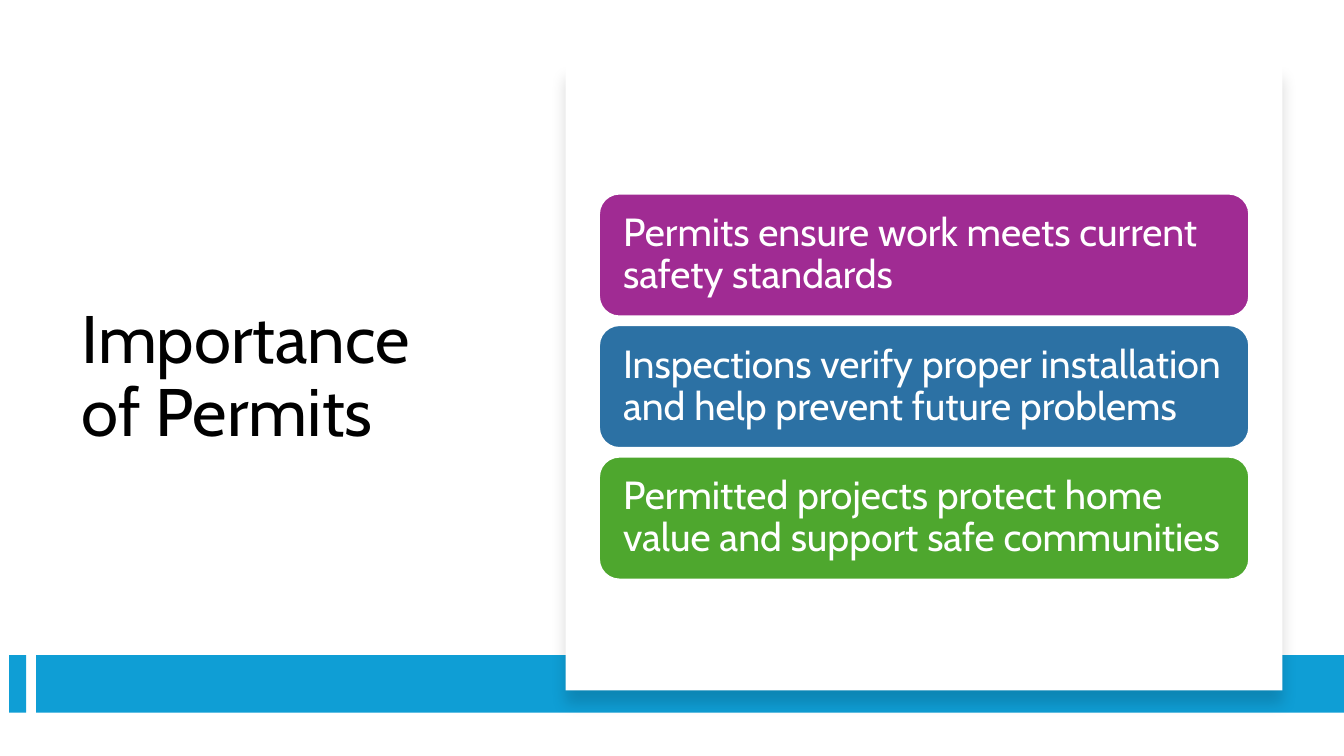
from lxml import etree
from pptx import Presentation
from pptx.dml.color import RGBColor
from pptx.enum.shapes import MSO_SHAPE as Shape
from pptx.enum.text import MSO_ANCHOR as Anchor, PP_ALIGN as Align
from pptx.oxml import parse_xml
from pptx.oxml.ns import nsdecls
from pptx.util import Inches, Pt

BLACK = RGBColor(0x00, 0x00, 0x00)
WHITE = RGBColor(0xFF, 0xFF, 0xFF)
CYAN = RGBColor(0x0F, 0x9E, 0xD5)
PURPLE = RGBColor(0xA0, 0x2B, 0x93)
BLUE = RGBColor(0x2C, 0x71, 0xA4)
GREEN = RGBColor(0x4E, 0xA7, 0x2E)

FONT = "Cabin"
REASONS = [
    ("Permits ensure work meets current safety standards", PURPLE),
    ("Inspections verify proper installation and help prevent future problems", BLUE),
    ("Permitted projects protect home value and support safe communities", GREEN),
]


def add_block(slide, kind, left, top, width, height, color):
    block = slide.shapes.add_shape(
        kind, Inches(left), Inches(top), Inches(width), Inches(height))
    block.shadow.inherit = False
    block.fill.solid()
    block.fill.fore_color.rgb = color
    block.line.fill.background()
    return block


def write(holder, words, size, color):
    frame = holder.text_frame
    frame.word_wrap = True
    frame.vertical_anchor = Anchor.MIDDLE
    frame.text = words
    line = frame.paragraphs[0]
    line.alignment = Align.LEFT
    line.line_spacing = 0.9
    font = line.runs[0].font
    font.name = FONT
    font.size = Pt(size)
    font.color.rgb = color


def add_title(slide, left, top, width, height):
    title = slide.shapes.add_textbox(
        Inches(left), Inches(top), Inches(width), Inches(height))
    write(title, "Importance of Permits", 48, BLACK)


def add_footer_band(slide, left, top, width, height):
    tab_width, gap = 0.17, 0.1
    band_offset = tab_width + gap
    add_block(slide, Shape.RECTANGLE, left, top, tab_width, height, CYAN)
    add_block(slide, Shape.RECTANGLE, left + band_offset, top,
              width - band_offset, height, CYAN)


def cast_shadow(block):
    effects = block._element.spPr.find(
        "{http://schemas.openxmlformats.org/drawingml/2006/main}effectLst")
    effects.append(parse_xml(
        f'<a:outerShdw {nsdecls("a")} blurRad="{Pt(11)}" dist="{Pt(10)}" '
        'dir="5400000" algn="t" rotWithShape="0"><a:srgbClr val="000000">'
        '<a:alpha val="15000"/></a:srgbClr></a:outerShdw>'))


def add_reasons_panel(slide, left, top, width, height):
    panel = add_block(slide, Shape.RECTANGLE, left, top, width, height, WHITE)
    cast_shadow(panel)
    margin, first_offset, card_height, pitch = 0.33, 1.28, 1.22, 1.305
    for index, (reason, color) in enumerate(REASONS):
        card = add_block(slide, Shape.ROUNDED_RECTANGLE, left + margin,
                         top + first_offset + index * pitch,
                         width - 2 * margin, card_height, color)
        card.line.color.rgb = WHITE
        card.line.width = Pt(1.5)
        frame = card.text_frame
        frame.margin_left = frame.margin_right = Inches(0.18)
        frame.margin_top = frame.margin_bottom = Inches(0.18)
        write(card, reason, 28, WHITE)


def main():
    deck = Presentation()
    deck.slide_width, deck.slide_height = Inches(13.33), Inches(7.5)
    slide = deck.slides.add_slide(deck.slide_layouts[6])
    add_title(slide, 0.71, 1.2, 4.15, 5.1)
    add_footer_band(slide, 0.09, 6.5, 13.24, 0.57)
    add_reasons_panel(slide, 5.61, 0.64, 7.11, 6.21)
    deck.save("out.pptx")


if __name__ == "__main__":
    main()
